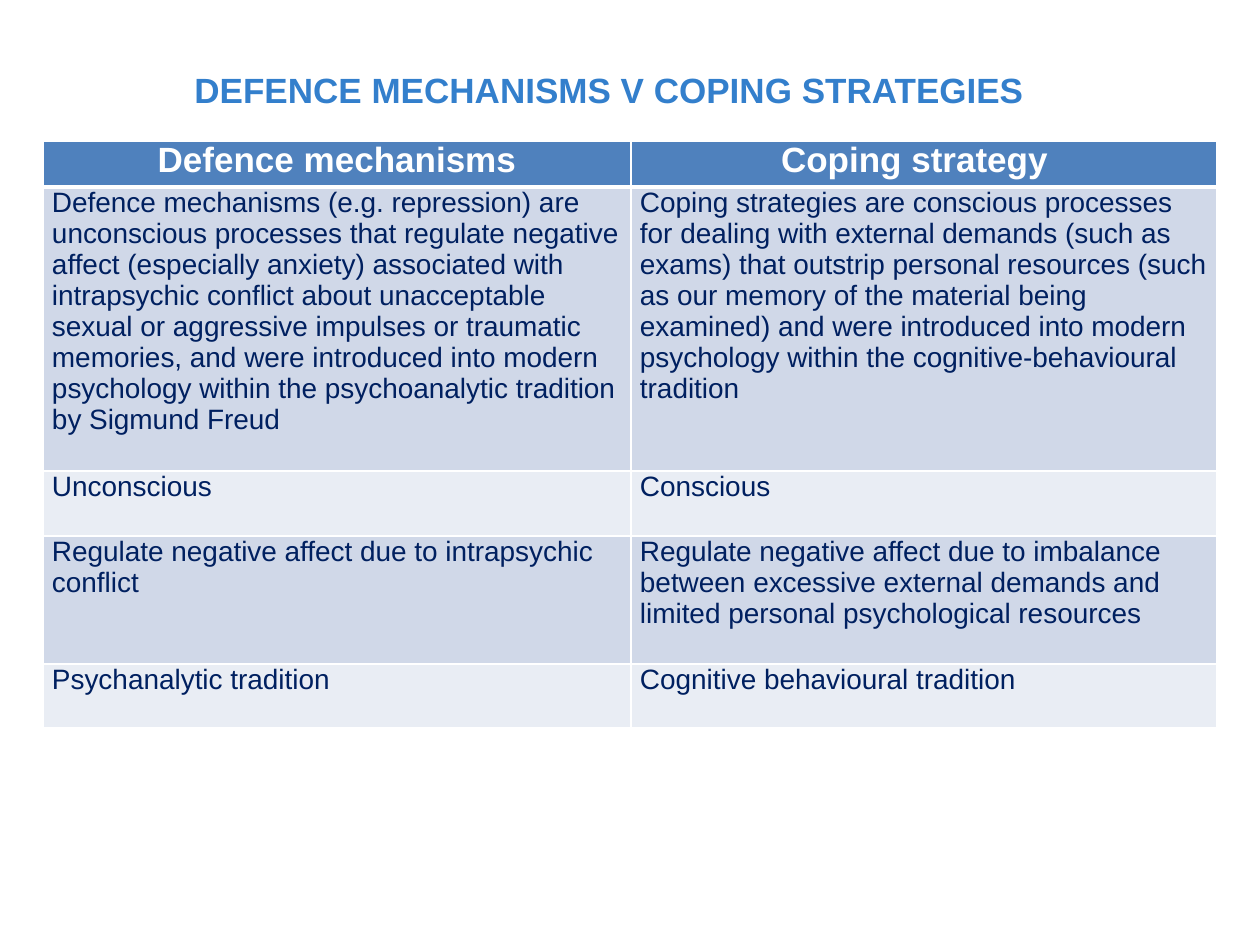
from lxml.etree import SubElement as Sub
from pptx import Presentation as Deck
from pptx.dml.color import RGBColor as RGB
from pptx.enum.text import PP_ALIGN as Align
from pptx.oxml.ns import qn
from pptx.util import Pt

SCALE = 914400 / 126
WHITE = RGB(0xFF, 0xFF, 0xFF)
NAVY = RGB(0x00, 0x20, 0x60)
AZURE = RGB(0x33, 0x7F, 0xCC)
HEAD = RGB(0x4F, 0x81, 0xBD)
BANDS = RGB(0xE9, 0xED, 0xF4), RGB(0xD0, 0xD8, 0xE8)
COLS = 588, 586
ROWS = 46, 284, 65, 128, 64
CELLS = [
    ("Defence mechanisms", "Coping strategy"),
    ("Defence mechanisms (e.g. repression) are unconscious processes that "
     "regulate negative affect (especially anxiety) associated with "
     "intrapsychic conflict about unacceptable sexual or aggressive impulses "
     "or traumatic memories, and were introduced into modern psychology "
     "within the psychoanalytic tradition by Sigmund Freud",
     "Coping strategies are conscious processes for dealing with external "
     "demands (such as exams) that outstrip personal resources (such as our "
     "memory of the material being examined) and were introduced into modern "
     "psychology within the cognitive-behavioural tradition"),
    ("Unconscious", "Conscious"),
    ("Regulate negative affect due to intrapsychic conflict",
     "Regulate negative affect due to imbalance between excessive external "
     "demands and limited personal psychological resources"),
    ("Psychanalytic tradition", "Cognitive behavioural tradition"),
]


def px(num):
    """Turn pixels into EMU."""
    return round(num * SCALE)


def apply(item, form):
    """Set each attribute in the format on the item."""
    for key, val in form.items():
        setattr(item, key, val)


def write(frame, text, size, color, bold, form):
    """Put one styled paragraph into a text frame."""
    para = frame.paragraphs[0]
    apply(para, form)
    run = para.add_run()
    run.text = text
    apply(run.font, {"name": "Arial", "size": Pt(size), "bold": bold})
    run.font.color.rgb = color


def edge(cell, side, width):
    """Draw one white border of a cell."""
    line = Sub(cell._tc.get_or_add_tcPr(), qn(f"a:ln{side}"), w=str(Pt(width)))
    fill = Sub(line, qn("a:solidFill"))
    Sub(fill, qn("a:srgbClr"), val=str(WHITE))


def style(cell, text, row, col):
    """Fill, frame and write one table cell."""
    head = row == 0
    for side in "LRTB":
        thick = (side, row) in (("B", 0), ("T", 1))
        edge(cell, side, 3 if thick else 1)
    cell.fill.solid()
    cell.fill.fore_color.rgb = HEAD if head else BANDS[row % 2]
    right = 28 if head and col else 9
    apply(cell, {"margin_left": px(9), "margin_right": px(right),
                 "margin_top": 0, "margin_bottom": 0})
    form = {"alignment": Align.CENTER if head else Align.LEFT,
            "space_before": Pt(2), "space_after": Pt(2)}
    write(cell.text_frame, text, 20 if head else 16,
          WHITE if head else NAVY, head, form)


def add_grid(slide):
    """Add the comparison table."""
    spot = map(px, (43, 141, sum(COLS), sum(ROWS)))
    grid = slide.shapes.add_table(len(ROWS), len(COLS), *spot).table
    for col, width in zip(grid.columns, COLS):
        col.width = px(width)
    for row, high in zip(grid.rows, ROWS):
        row.height = px(high)
    for row, texts in enumerate(CELLS):
        for col, text in enumerate(texts):
            style(grid.cell(row, col), text, row, col)


def add_title(slide):
    """Add the slide heading."""
    frame = slide.shapes.add_textbox(*map(px, (182, 58, 896, 64))).text_frame
    frame.word_wrap = True
    write(frame, "DEFENCE MECHANISMS V COPING STRATEGIES", 20, AZURE, True,
          {"line_spacing": 1.1})


def main():
    """Build and save the slide."""
    deck = Deck()
    apply(deck, {"slide_width": px(1260), "slide_height": px(945)})
    slide = deck.slides.add_slide(deck.slide_layouts[6])
    add_grid(slide)
    add_title(slide)
    deck.save("out.pptx")


if __name__ == "__main__":
    main()
